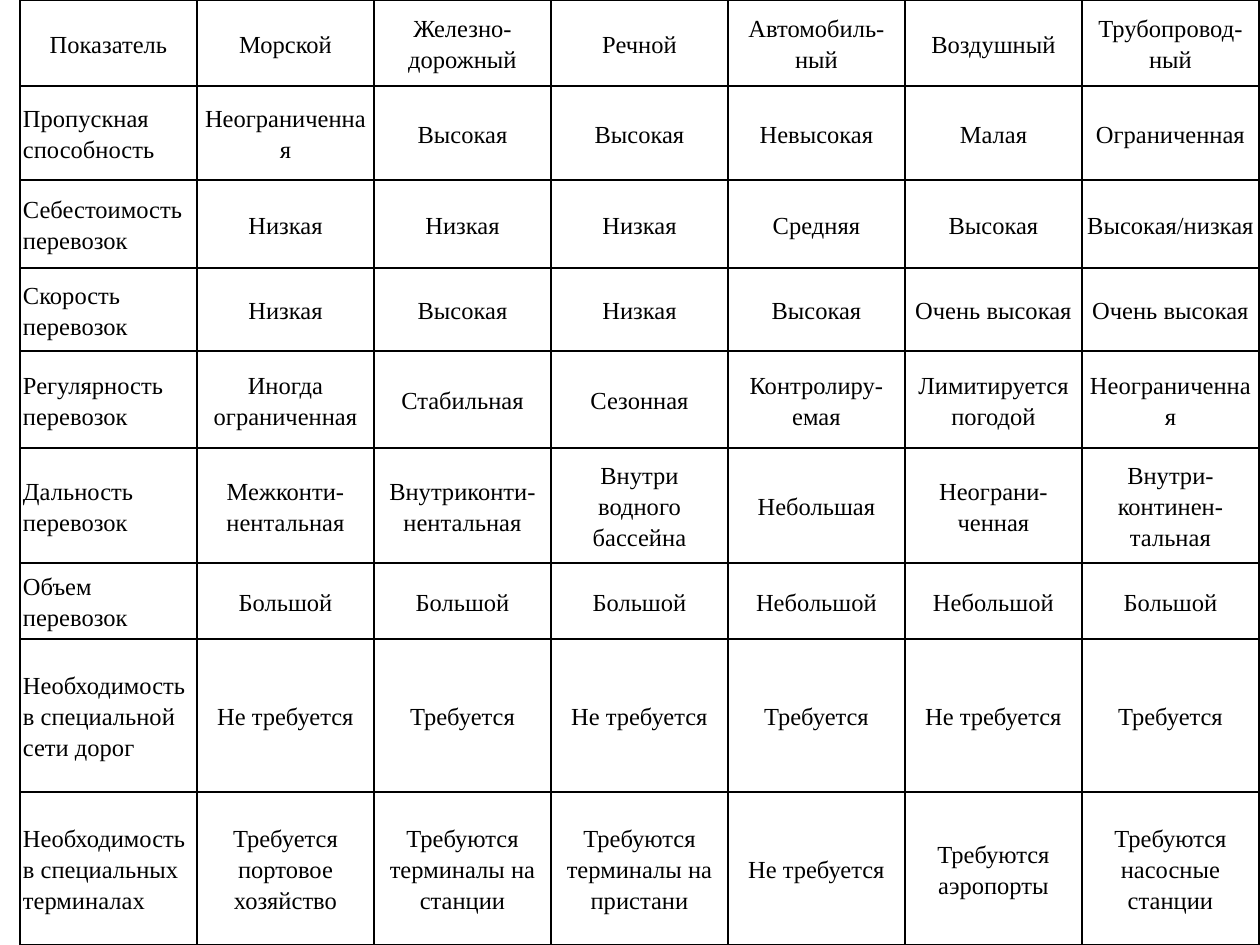
"""Build a slide with a table that compares kinds of transport."""
import dataclasses

import pptx
import pptx.dml.color
import pptx.enum.text
import pptx.oxml
import pptx.oxml.ns
import pptx.util

PX = 914400 / 126


@dataclasses.dataclass(frozen=True)
class Theme:
    """Colours, type and line widths."""
    ink: str = "000000"
    font: str = "Times New Roman"
    size: int = 14
    spacing: float = 1.15
    rule: int = 1


THEME = Theme()
SLIDE_WIDTH, SLIDE_HEIGHT = 1260, 945
TABLE_LEFT, TABLE_TOP = 20, 0
COLUMN_WIDTH = 177
CELL_INSET = 3
ROW_HEIGHTS = [86, 94, 88, 83, 97, 115, 76, 153, 153]
ROWS = [
    ["Показатель", "Морской", "Железно-дорожный", "Речной",
     "Автомобиль-ный", "Воздушный", "Трубопровод-ный"],
    ["Пропускная способность", "Неограниченная", "Высокая", "Высокая",
     "Невысокая", "Малая", "Ограниченная"],
    ["Себестоимость перевозок", "Низкая", "Низкая", "Низкая",
     "Средняя", "Высокая", "Высокая/низкая"],
    ["Скорость перевозок", "Низкая", "Высокая", "Низкая",
     "Высокая", "Очень высокая", "Очень высокая"],
    ["Регулярность перевозок", "Иногда\nограниченная", "Стабильная", "Сезонная",
     "Контролиру-\nемая", "Лимитируется погодой", "Неограниченная"],
    ["Дальность перевозок", "Межконти-нентальная", "Внутриконти-нентальная",
     "Внутри\nводного бассейна", "Небольшая", "Неограни-ченная",
     "Внутри-континен-тальная"],
    ["Объем перевозок", "Большой", "Большой", "Большой",
     "Небольшой", "Небольшой", "Большой"],
    ["Необходимость в специальной сети дорог", "Не требуется", "Требуется",
     "Не требуется", "Требуется", "Не требуется", "Требуется"],
    ["Необходимость в специальных терминалах", "Требуется портовое хозяйство",
     "Требуются терминалы на станции", "Требуются терминалы на пристани",
     "Не требуется", "Требуются аэропорты", "Требуются насосные станции"],
]


def px(length):
    """Turn pixels into EMU."""
    return pptx.util.Emu(round(length * PX))


def rule_cell(cell):
    """Draw a thin rule on all four sides of a cell."""
    properties = cell._tc.get_or_add_tcPr()
    width = pptx.util.Pt(THEME.rule)
    for index, side in enumerate(("lnL", "lnR", "lnT", "lnB")):
        line = pptx.oxml.parse_xml(
            f'<a:{side} {pptx.oxml.ns.nsdecls("a")} w="{width}"><a:solidFill>'
            f'<a:srgbClr val="{THEME.ink}"/></a:solidFill></a:{side}>')
        properties.insert(index, line)


def fill_cell(cell, text, alignment):
    """Write and format the text of a cell."""
    cell.fill.background()
    cell.vertical_anchor = pptx.enum.text.MSO_ANCHOR.MIDDLE
    cell.margin_left = cell.margin_right = px(CELL_INSET)
    cell.margin_top = cell.margin_bottom = 0
    cell.text_frame.text = text
    for para in cell.text_frame.paragraphs:
        para.alignment = alignment
        para.line_spacing = THEME.spacing
        for span in para.runs:
            span.font.name = THEME.font
            span.font.size = pptx.util.Pt(THEME.size)
            span.font.color.rgb = pptx.dml.color.RGBColor.from_string(THEME.ink)


def add_comparison_table(page):
    """Add the ruled table with row labels set to the left."""
    columns = len(ROWS[0])
    table = page.shapes.add_table(
        len(ROWS), columns, px(TABLE_LEFT), px(TABLE_TOP),
        px(COLUMN_WIDTH * columns), px(sum(ROW_HEIGHTS))).table
    table.first_row = table.horz_banding = False
    for column in table.columns:
        column.width = px(COLUMN_WIDTH)
    align = pptx.enum.text.PP_ALIGN
    for row_index, (height, texts) in enumerate(zip(ROW_HEIGHTS, ROWS)):
        table.rows[row_index].height = px(height)
        for column_index, text in enumerate(texts):
            cell = table.cell(row_index, column_index)
            is_label = row_index > 0 and column_index == 0
            fill_cell(cell, text, align.LEFT if is_label else align.CENTER)
            rule_cell(cell)


def main():
    """Build and save the deck."""
    deck = pptx.Presentation()
    deck.slide_width, deck.slide_height = px(SLIDE_WIDTH), px(SLIDE_HEIGHT)
    page = deck.slides.add_slide(deck.slide_layouts[6])
    add_comparison_table(page)
    deck.save("out.pptx")


if __name__ == "__main__":
    main()
